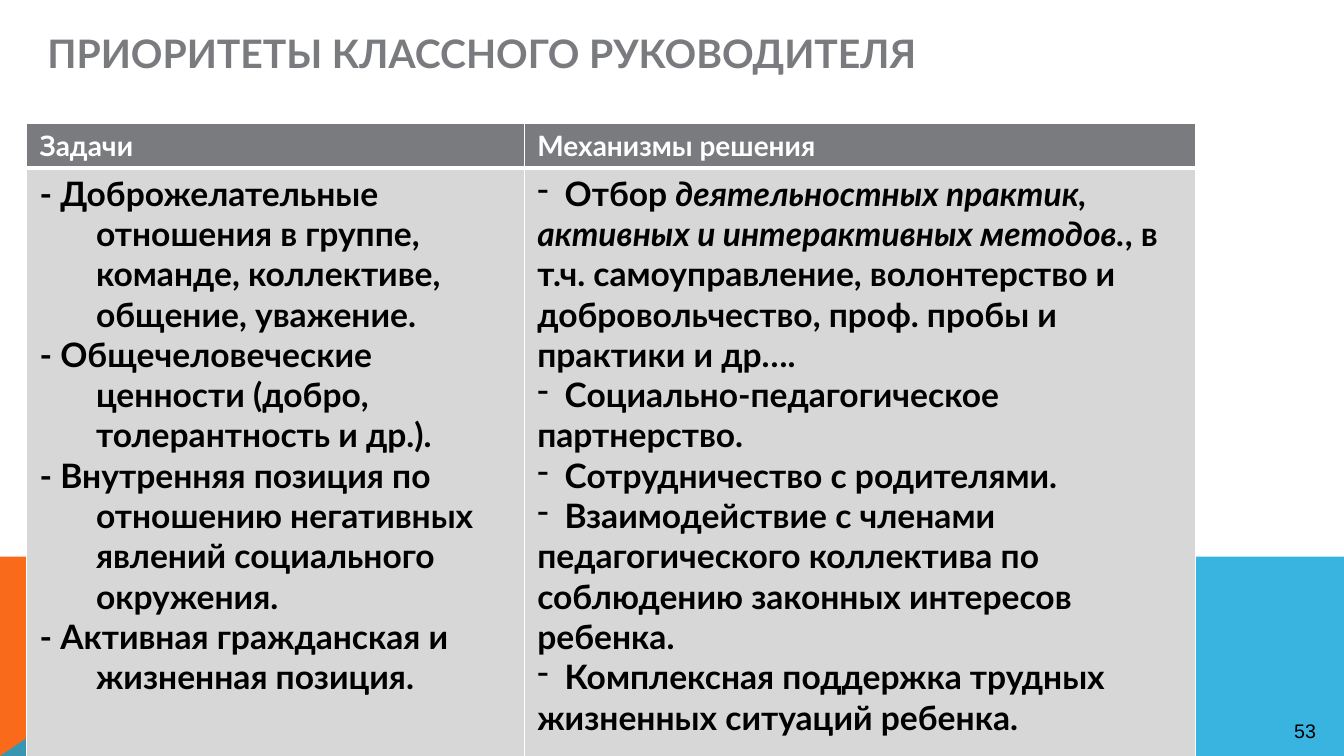
from lxml.etree import SubElement
from pptx import Presentation
from pptx.dml.color import RGBColor
from pptx.enum.text import MSO_ANCHOR as Anchor, PP_ALIGN as Align
from pptx.oxml.ns import qn
from pptx.util import Cm, Pt

COLORS = {"orange": "F96A1B", "blue": "08A1D9", "gray": "797B7E",
          "cell": "D7D7D8", "white": "FFFFFF", "black": "000000"}
TASKS = [
    "- Доброжелательные отношения в группе, команде, коллективе, общение, уважение.",
    "- Общечеловеческие ценности (добро, толерантность и др.).",
    "- Внутренняя позиция по отношению негативных явлений социального окружения.",
    "- Активная гражданская и жизненная позиция.",
]
# Each mechanism is a list of runs; every second run is italic
MECHANISMS = [
    ["Отбор ", "деятельностных практик, активных и интерактивных методов.",
     ", в т.ч. самоуправление, волонтерство и добровольчество, проф. пробы и практики и др…."],
    ["Социально-педагогическое партнерство."],
    ["Сотрудничество с родителями."],
    ["Взаимодействие с членами педагогического коллектива по соблюдению законных интересов ребенка."],
    ["Комплексная поддержка трудных жизненных ситуаций ребенка."],
]


def color(name):
    return RGBColor.from_string(COLORS[name])


def style(span, size, tone, font="Lato", bold=True, italic=False):
    span.font.size, span.font.name = Pt(size), font
    span.font.bold, span.font.italic = bold, italic
    span.font.color.rgb = color(tone)


def add_band(page, box, points, tone, opacity=100):
    """Draw a polygon whose points are in cm from the box's corner."""
    left, top = box
    corners = [(Cm(left + x), Cm(top + y)) for x, y in points]
    builder = page.shapes.build_freeform(*corners[0])
    builder.add_line_segments(corners[1:], close=True)
    band = builder.convert_to_shape()
    band.shadow.inherit = False
    band.fill.solid()
    band.fill.fore_color.rgb = color(tone)
    band.line.fill.background()
    if opacity < 100:
        tint = band.fill._xPr.find(".//" + qn("a:srgbClr"))
        SubElement(tint, qn("a:alpha"), val=str(opacity * 1000))


def add_footer(page, box):
    left, top, width, height = box
    add_band(page, (left, top), [(0, height), (0, 0), (7.57, 0), (13.23, height)], "orange")
    add_band(page, (left, top), [(0, height), (7.54, 0), (width, 0), (width, height)], "blue", 80)
    # Page number
    number = page.shapes.add_textbox(Cm(left + width - 1.96), Cm(top + 3.96), Cm(1.96), Cm(0.86))
    number.text_frame.word_wrap = True
    number.text_frame.text = "53"
    para = number.text_frame.paragraphs[0]
    para.alignment = Align.CENTER
    style(para.runs[0], 14, "black", "Arial", bold=False)


def add_title(page, box):
    title = page.shapes.title
    title.left, title.top, title.width, title.height = map(Cm, box)
    frame = title.text_frame
    frame.text = "ПРИОРИТЕТЫ КЛАССНОГО РУКОВОДИТЕЛЯ"
    frame.vertical_anchor = Anchor.MIDDLE
    frame.paragraphs[0].alignment = Align.LEFT
    style(frame.paragraphs[0].runs[0], 28, "gray")


def format_cell(cell, tone, bottom_width):
    cell.margin_left = cell.margin_right = Cm(0.33)
    cell.margin_top = cell.margin_bottom = Cm(0.13)
    # Borders come before the fill in the cell properties
    properties = cell._tc.get_or_add_tcPr()
    for side, width in (("lnL", 1), ("lnR", 1), ("lnT", 1), ("lnB", bottom_width)):
        border = SubElement(properties, qn("a:" + side), w=str(Pt(width)))
        paint = SubElement(border, qn("a:solidFill"))
        SubElement(paint, qn("a:srgbClr"), val=COLORS["white"])
    cell.fill.solid()
    cell.fill.fore_color.rgb = color(tone)


def next_paragraph(frame, index):
    return frame.add_paragraph() if index else frame.paragraphs[0]


def fill_tasks(frame):
    for index, task in enumerate(TASKS):
        para = next_paragraph(frame, index)
        para.text = task
        style(para.runs[0], 24, "black")
        properties = para._p.get_or_add_pPr()
        properties.set("marL", str(Cm(1.42)))
        properties.set("indent", str(-Cm(1.42)))


def fill_mechanisms(frame):
    for index, parts in enumerate(MECHANISMS):
        para = next_paragraph(frame, index)
        properties = para._p.get_or_add_pPr()
        properties.set("marL", "0")
        properties.set("indent", "0")
        SubElement(properties, qn("a:buChar"), char="-")
        # A tab stop sets the gap after the dash
        stops = SubElement(properties, qn("a:tabLst"))
        SubElement(stops, qn("a:tab"), pos=str(Cm(0.69)), algn="l")
        for position, part in enumerate(parts):
            span = para.add_run()
            span.text = part if position else "\t" + part
            style(span, 24, "black", italic=position % 2 == 1)


def add_priorities_table(page, box):
    table = page.shapes.add_table(2, 2, *map(Cm, box)).table
    for column, width in zip(table.columns, (12.54, 16.92)):
        column.width = Cm(width)
    for row, height in zip(table.rows, (1.1, 14.84)):
        row.height = Cm(height)
    headings = ("Задачи", "Механизмы решения")
    fillers = (fill_tasks, fill_mechanisms)
    for index, (heading, fill_body) in enumerate(zip(headings, fillers)):
        head, body = table.cell(0, index), table.cell(1, index)
        format_cell(head, "gray", 3)
        head.text_frame.text = heading
        style(head.text_frame.paragraphs[0].runs[0], 20, "white")
        format_cell(body, "cell", 1)
        fill_body(body.text_frame)


def main():
    deck = Presentation()
    deck.slide_width, deck.slide_height = Cm(33.87), Cm(19.05)
    page = deck.slides.add_slide(deck.slide_layouts.get_by_name("Title Only"))
    add_footer(page, (0, 14.03, 33.87, 5.02))
    add_title(page, (0.94, 0, 28.93, 2.64))
    add_priorities_table(page, (0.67, 3.12, 29.46, 15.94))
    deck.save("out.pptx")


if __name__ == "__main__":
    main()
